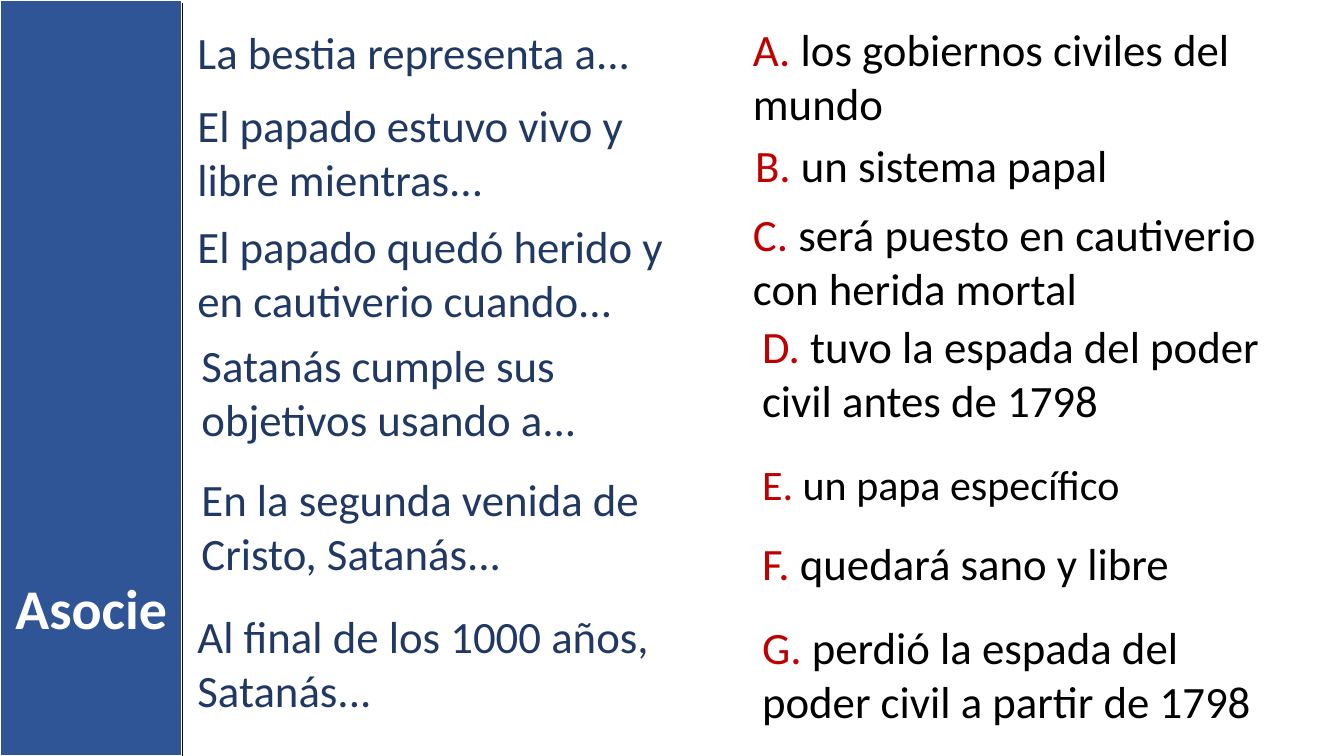
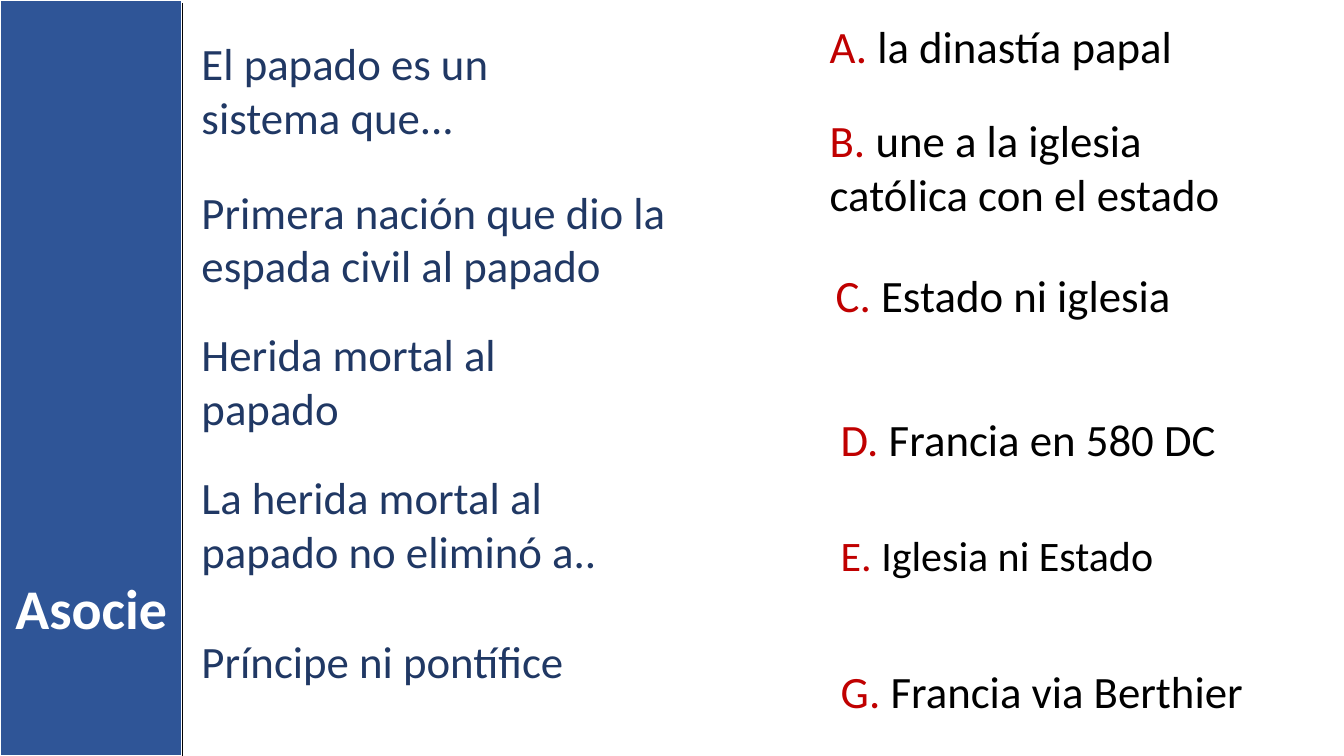
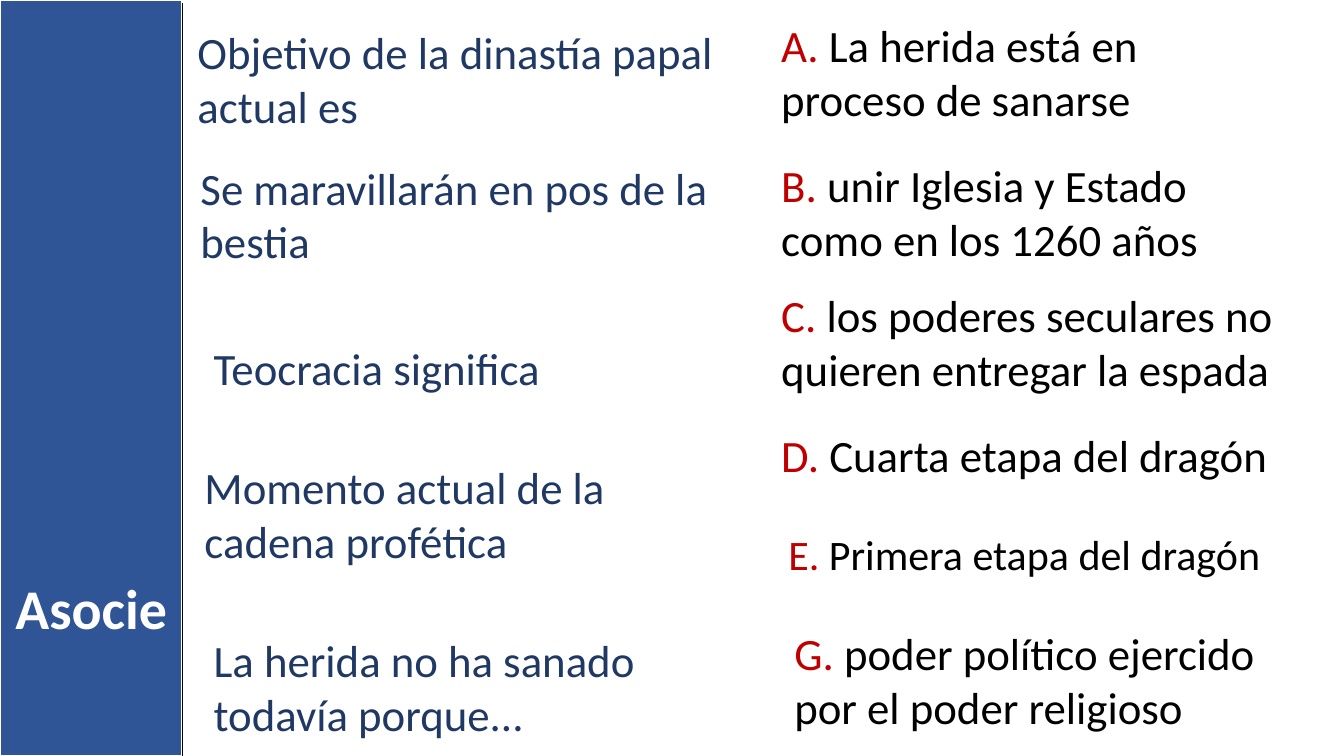
from lxml import etree
from pptx import Presentation
from pptx.dml.color import RGBColor
from pptx.enum.shapes import MSO_CONNECTOR, MSO_SHAPE
from pptx.enum.text import MSO_AUTO_SIZE, PP_ALIGN
from pptx.oxml.ns import qn
from pptx.util import Inches, Pt

RECT = MSO_SHAPE.RECTANGLE
STRAIGHT = MSO_CONNECTOR.STRAIGHT
FIT_SHAPE = MSO_AUTO_SIZE.SHAPE_TO_FIT_TEXT
LEFT, CENTER = PP_ALIGN.LEFT, PP_ALIGN.CENTER

COLORS = {
    "band": "2F5597",
    "white": "FFFFFF",
    "prompt": "203864",
    "letter": "C00000",
    "answer": "000000",
}
SLIDE_W, SLIDE_H = 13.33, 7.5
BAND_W = 1.81
BODY = {"name": "Calibri", "size": Pt(32), "bold": False}
SMALL = {**BODY, "size": Pt(30)}
TITLE = {**BODY, "size": Pt(40), "bold": True}

# Each slide: prompts (left, top, width, lines, text)
# and answers (letter, left, top, width, lines, text)
SLIDES = [
    {
        "prompts": [
            (1.86, 0.2, 5.11, 1, "La bestia representa a..."),
            (1.86, 0.92, 4.94, 2, "El papado estuvo vivo y libre mientras..."),
            (1.86, 2.12, 5.1, 2, "El papado quedó herido y en cautiverio cuando..."),
            (1.9, 3.3, 4.94, 2, "Satanás cumple sus objetivos usando a..."),
            (1.9, 4.63, 4.77, 2, "En la segunda venida de Cristo, Satanás..."),
            (1.86, 5.99, 4.77, 2, "Al final de los 1000 años, Satanás..."),
        ],
        "answers": [
            ("A", 7.37, 0.17, 5.04, 2, "los gobiernos civiles del mundo"),
            ("B", 7.39, 1.32, 5.29, 1, "un sistema papal"),
            ("C", 7.37, 2, 5.3, 2, "será puesto en cautiverio con herida mortal"),
            ("D", 7.46, 3.11, 5.53, 2, "tuvo la espada del poder civil antes de 1798"),
            ("E", 7.46, 4.5, 5.29, 1, "un papa específico"),
            ("F", 7.46, 5.27, 4.88, 1, "quedará sano y libre"),
            ("G", 7.46, 6.1, 5.47, 2, "perdió la espada del poder civil a partir de 1798"),
        ],
    },
    {
        "prompts": [
            (1.9, 0.31, 4.52, 2, "El papado es un sistema que..."),
            (1.9, 1.78, 5.11, 2, "Primera nación que dio la espada civil al papado"),
            (1.9, 3.19, 4.28, 2, "Herida mortal al papado"),
            (1.9, 4.61, 4.74, 2, "La herida mortal al papado no eliminó a.."),
            (1.9, 6.24, 4.28, 1, "Príncipe ni pontífice"),
        ],
        "answers": [
            ("A", 8.13, 0.14, 4.43, 1, "la dinastía papal"),
            ("B", 8.13, 1.07, 4.75, 2, "une a la iglesia católica con el estado"),
            ("C", 8.19, 2.61, 4.32, 1, "Estado ni iglesia"),
            ("D", 8.24, 4.04, 5.04, 1, "Francia en 580 DC"),
            ("E", 8.24, 5.2, 4.8, 1, "Iglesia ni Estado"),
            ("G", 8.24, 6.54, 4.48, 1, "Francia via Berthier"),
        ],
    },
    {
        "prompts": [
            (1.86, 0.2, 5.86, 2, "Objetivo de la dinastía papal actual es"),
            (1.89, 1.54, 6.27, 2, "Se maravillarán en pos de la bestia"),
            (2.02, 3.33, 3.55, 1, "Teocracia significa"),
            (1.93, 4.51, 5.16, 2, "Momento actual de la cadena profética"),
            (2.02, 6.23, 5.08, 2, "La herida no ha sanado todavía porque..."),
        ],
        "answers": [
            ("A", 7.65, 0.13, 4.43, 2, "La herida está en proceso de sanarse"),
            ("B", 7.65, 1.52, 4.75, 2, "unir Iglesia y Estado como en los 1260 años"),
            ("C", 7.65, 2.81, 5.47, 2, "los poderes seculares no quieren entregar la espada"),
            ("D", 7.65, 4.19, 5.19, 1, "Cuarta etapa del dragón"),
            ("E", 7.72, 5.19, 5.06, 1, "Primera etapa del dragón"),
            ("G", 7.78, 6.16, 5.06, 2, "poder político ejercido por el poder religioso"),
        ],
    },
]


def rgb(name):
    return RGBColor.from_string(COLORS[name])


def add_text(s, left, top, width, lines, runs, fmt=BODY, align=LEFT):
    """Add a text box; runs are (text, colour name) pairs."""
    # Line height is 1.22 times the type size, plus the two insets
    height = round(0.1 + lines * fmt["size"].pt * 1.22 / 72, 2)
    sp = s.shapes.add_textbox(*map(Inches, (left, top, width, height)))
    tf = sp.text_frame
    tf.word_wrap = True
    tf.auto_size = FIT_SHAPE
    p = tf.paragraphs[0]
    p.alignment = align
    for text, color in runs:
        r = p.add_run()
        r.text = text
        for key, value in fmt.items():
            setattr(r.font, key, value)
        r.font.color.rgb = rgb(color)


def add_band(s):
    """Add the side band with its title and edge line."""
    sp = s.shapes.add_shape(RECT, 0, 0, Inches(BAND_W), Inches(SLIDE_H))
    sp.shadow.inherit = False
    sp.fill.solid()
    sp.fill.fore_color.rgb = rgb("band")
    sp.line.color.rgb = rgb("white")
    sp.line.width = Pt(1.5)

    add_text(s, 0, 5.64, BAND_W, 1, [("Asocie", "white")], TITLE, CENTER)

    edge = s.shapes.add_connector(
        STRAIGHT, *map(Inches, (BAND_W, 0.03, BAND_W, SLIDE_H)))
    edge.line.color.rgb = rgb("answer")
    edge.line.width = Pt(1)
    etree.SubElement(edge._element.spPr, qn("a:effectLst"))


def add_prompt(s, left, top, width, lines, text):
    add_text(s, left, top, width, lines, [(text, "prompt")])


def add_answer(s, letter, left, top, width, lines, text):
    # Answer E is set slightly smaller on every slide
    fmt = SMALL if letter == "E" else BODY
    runs = [(f"{letter}. ", "letter"), (text, "answer")]
    add_text(s, left, top, width, lines, runs, fmt)


def main():
    prs = Presentation()
    prs.slide_width, prs.slide_height = Inches(SLIDE_W), Inches(SLIDE_H)
    for content in SLIDES:
        s = prs.slides.add_slide(prs.slide_layouts[6])
        add_band(s)
        for prompt in content["prompts"]:
            add_prompt(s, *prompt)
        for answer in content["answers"]:
            add_answer(s, *answer)
    prs.save("out.pptx")


if __name__ == "__main__":
    main()
